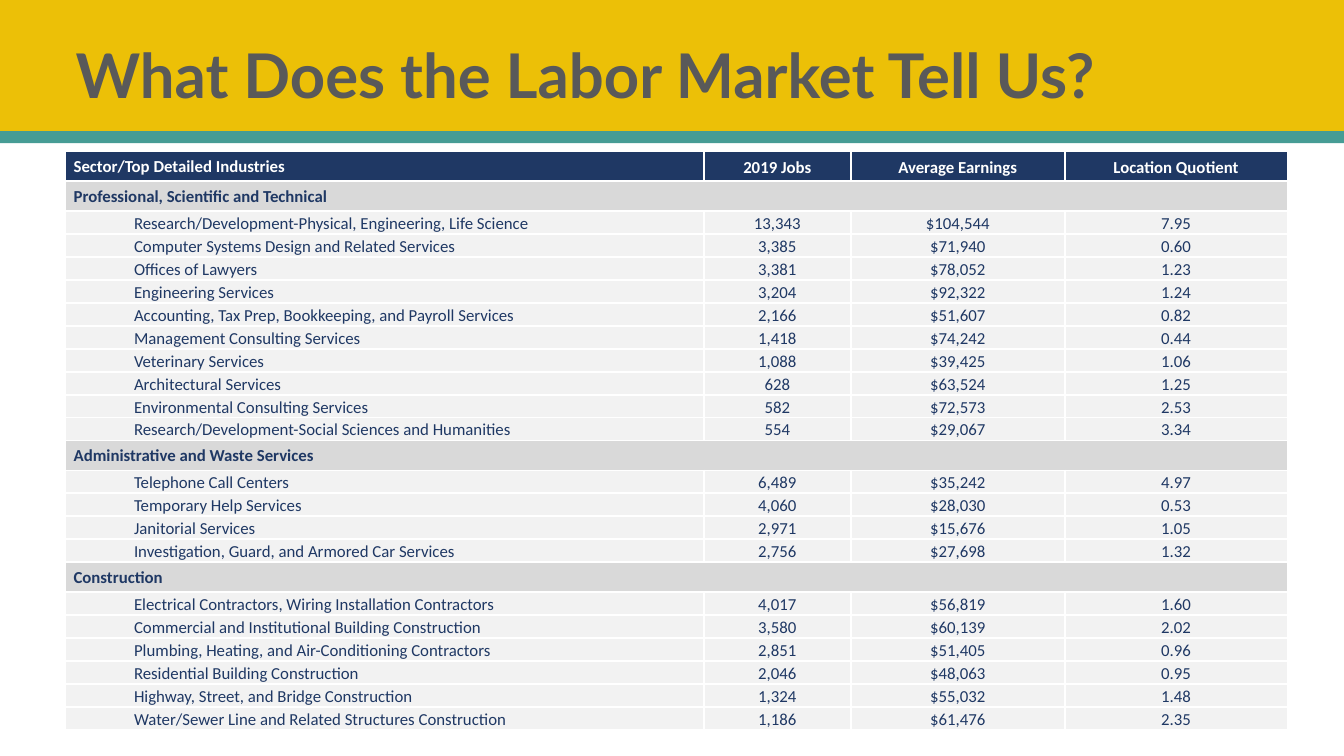
from dataclasses import dataclass

import lxml.etree
import pptx
import pptx.dml.color
import pptx.enum.shapes
import pptx.enum.text
import pptx.oxml.ns
import pptx.util

EMU_PER_PX = 9144
ALIGN = pptx.enum.text.PP_ALIGN
ANCHOR = pptx.enum.text.MSO_ANCHOR


def px(length: int) -> int:
    return length * EMU_PER_PX


def rgb(color: str) -> pptx.dml.color.RGBColor:
    return pptx.dml.color.RGBColor.from_string(color)


@dataclass(frozen=True)
class Theme:
    gold: str = "ECC007"
    teal: str = "469C95"
    navy: str = "1F3864"
    sector_gray: str = "D9D9D9"
    detail_gray: str = "F2F2F2"
    title_gray: str = "595959"
    white: str = "FFFFFF"
    title_font: str = "Lato"
    table_font: str = "Calibri"
    title_size: int = 44
    table_size: int = 12
    border_width: float = 1.5


@dataclass(frozen=True)
class Band:
    top: int
    height: int
    color: str


@dataclass(frozen=True)
class Industry:
    name: str
    jobs: str
    earnings: str
    quotient: str


@dataclass(frozen=True)
class Sector:
    name: str
    industries: tuple[Industry, ...]


@dataclass(frozen=True)
class CellLook:
    fill: str
    color: str
    bold: bool = False
    align: ALIGN = ALIGN.LEFT
    heading: bool = False
    open_side: str = ""


THEME = Theme()
SLIDE_WIDTH, SLIDE_HEIGHT = 1333, 750
BANDS = (Band(0, 141, THEME.gold), Band(130, 12, THEME.teal))
COLUMN_WIDTHS = (62, 571, 146, 212, 221)
HEADING_HEIGHT, DETAIL_HEIGHT = 26, 19
TABLE_LEFT, TABLE_TOP, TABLE_HEIGHT = 65, 150, 564
HEADINGS = ("Sector/Top Detailed Industries", "", "2019 Jobs",
            "Average Earnings", "Location Quotient")

SECTORS = (
    Sector("Professional, Scientific and Technical", (
        Industry("Research/Development-Physical, Engineering, Life Science", "13,343", "$104,544", "7.95"),
        Industry("Computer Systems Design and Related Services", "3,385", "$71,940", "0.60"),
        Industry("Offices of Lawyers", "3,381", "$78,052", "1.23"),
        Industry("Engineering Services", "3,204", "$92,322", "1.24"),
        Industry("Accounting, Tax Prep, Bookkeeping, and Payroll Services", "2,166", "$51,607", "0.82"),
        Industry("Management Consulting Services", "1,418", "$74,242", "0.44"),
        Industry("Veterinary Services", "1,088", "$39,425", "1.06"),
        Industry("Architectural Services", "628", "$63,524", "1.25"),
        Industry("Environmental Consulting Services", "582", "$72,573", "2.53"),
        Industry("Research/Development-Social Sciences and Humanities", "554", "$29,067", "3.34"),
    )),
    Sector("Administrative and Waste Services", (
        Industry("Telephone Call Centers", "6,489", "$35,242", "4.97"),
        Industry("Temporary Help Services", "4,060", "$28,030", "0.53"),
        Industry("Janitorial Services", "2,971", "$15,676", "1.05"),
        Industry("Investigation, Guard, and Armored Car Services", "2,756", "$27,698", "1.32"),
    )),
    Sector("Construction", (
        Industry("Electrical Contractors, Wiring Installation Contractors", "4,017", "$56,819", "1.60"),
        Industry("Commercial and Institutional Building Construction", "3,580", "$60,139", "2.02"),
        Industry("Plumbing, Heating, and Air-Conditioning Contractors", "2,851", "$51,405", "0.96"),
        Industry("Residential Building Construction", "2,046", "$48,063", "0.95"),
        Industry("Highway, Street, and Bridge Construction", "1,324", "$55,032", "1.48"),
        Industry("Water/Sewer Line and Related Structures Construction", "1,186", "$61,476", "2.35"),
    )),
)

HEADER_NAME = CellLook(THEME.navy, THEME.white, bold=True, heading=True)
HEADER_VALUE = CellLook(THEME.navy, THEME.white, bold=True, align=ALIGN.CENTER)
SECTOR_NAME = CellLook(THEME.sector_gray, THEME.navy, bold=True, heading=True)
DETAIL_INDENT = CellLook(THEME.detail_gray, THEME.navy, open_side="R")
DETAIL_NAME = CellLook(THEME.detail_gray, THEME.navy, open_side="L")
DETAIL_VALUE = CellLook(THEME.detail_gray, THEME.navy, align=ALIGN.CENTER)
HEADER_LOOKS = (HEADER_NAME,) * 2 + (HEADER_VALUE,) * 3
DETAIL_LOOKS = (DETAIL_INDENT, DETAIL_NAME) + (DETAIL_VALUE,) * 3


def apply(target, values: dict) -> None:
    for attribute, value in values.items():
        setattr(target, attribute, value)


def format_text(target, font: str, size: int, color: str, bold: bool) -> None:
    apply(target.font, {"name": font, "size": pptx.util.Pt(size), "bold": bold})
    target.font.color.rgb = rgb(color)


def add_band(slide, band: Band) -> None:
    shape = slide.shapes.add_shape(
        pptx.enum.shapes.MSO_SHAPE.RECTANGLE,
        0, px(band.top), px(SLIDE_WIDTH), px(band.height))
    shape.shadow.inherit = False
    shape.fill.solid()
    shape.fill.fore_color.rgb = rgb(band.color)
    shape.line.fill.background()


def add_borders(cell, open_side: str) -> None:
    """Give a cell white borders, leaving the open side unruled."""
    qn = pptx.oxml.ns.qn
    properties = cell._tc.get_or_add_tcPr()
    for side in "LRTB":
        line = lxml.etree.SubElement(properties, qn(f"a:ln{side}"))
        if side == open_side:
            lxml.etree.SubElement(line, qn("a:noFill"))
            continue
        line.set("w", str(pptx.util.Pt(THEME.border_width)))
        fill = lxml.etree.SubElement(line, qn("a:solidFill"))
        lxml.etree.SubElement(fill, qn("a:srgbClr"), val=THEME.white)


def fill_cell(cell, text: str, look: CellLook) -> None:
    side, top, bottom = (8, 4, 4) if look.heading else (6, 1, 0)
    apply(cell, {
        "margin_left": px(side), "margin_right": px(side),
        "margin_top": px(top), "margin_bottom": px(bottom),
        "vertical_anchor": ANCHOR.TOP if look.heading else ANCHOR.MIDDLE,
    })
    add_borders(cell, look.open_side)
    cell.fill.solid()
    cell.fill.fore_color.rgb = rgb(look.fill)
    paragraph = cell.text_frame.paragraphs[0]
    apply(paragraph, {"alignment": look.align, "line_spacing": 1.07})
    if text:
        run = paragraph.add_run()
        run.text = text
        format_text(run, THEME.table_font, THEME.table_size, look.color, look.bold)
    else:
        lxml.etree.SubElement(paragraph._p, pptx.oxml.ns.qn("a:endParaRPr"),
                              sz=str(THEME.table_size * 100))


def add_industry_table(slide) -> None:
    rows = [(HEADINGS, HEADER_LOOKS, 2)]
    for sector in SECTORS:
        rows.append(((sector.name, "", "", "", ""), (SECTOR_NAME,) * 5, 5))
        for item in sector.industries:
            texts = ("", item.name, item.jobs, item.earnings, item.quotient)
            rows.append((texts, DETAIL_LOOKS, 1))

    frame = slide.shapes.add_table(
        len(rows), len(COLUMN_WIDTHS), px(TABLE_LEFT), px(TABLE_TOP),
        px(sum(COLUMN_WIDTHS)), px(TABLE_HEIGHT))
    table = frame.table
    apply(table, {"first_row": False, "horz_banding": False})
    for column, width in zip(table.columns, COLUMN_WIDTHS):
        column.width = px(width)
    for index, (texts, looks, span) in enumerate(rows):
        table.rows[index].height = px(HEADING_HEIGHT if span > 1 else DETAIL_HEIGHT)
        for column, (text, look) in enumerate(zip(texts, looks)):
            fill_cell(table.cell(index, column), text, look)
        if span > 1:
            table.cell(index, 0).merge(table.cell(index, span - 1))
    frame.height = px(TABLE_HEIGHT)


def place_title(slide) -> None:
    """Format the title and bring it in front of the bands."""
    title = slide.shapes.title
    apply(title, {"left": px(65), "top": px(5), "width": px(1150), "height": px(145)})
    apply(title.text_frame, {
        "text": "What Does the Labor Market Tell Us?", "word_wrap": True,
        "vertical_anchor": ANCHOR.MIDDLE, "auto_size": pptx.enum.text.MSO_AUTO_SIZE.NONE,
    })
    question = title.text_frame.paragraphs[0]
    apply(question, {"alignment": ALIGN.LEFT, "line_spacing": 0.9})
    format_text(question.runs[0], THEME.title_font, THEME.title_size, THEME.title_gray, True)
    slide.shapes._spTree.append(title._element)


def main() -> None:
    deck = pptx.Presentation()
    apply(deck, {"slide_width": px(SLIDE_WIDTH), "slide_height": px(SLIDE_HEIGHT)})
    slide = deck.slides.add_slide(deck.slide_layouts.get_by_name("Title Only"))
    for band in BANDS:
        add_band(slide, band)
    add_industry_table(slide)
    place_title(slide)
    deck.save("out.pptx")


if __name__ == "__main__":
    main()
